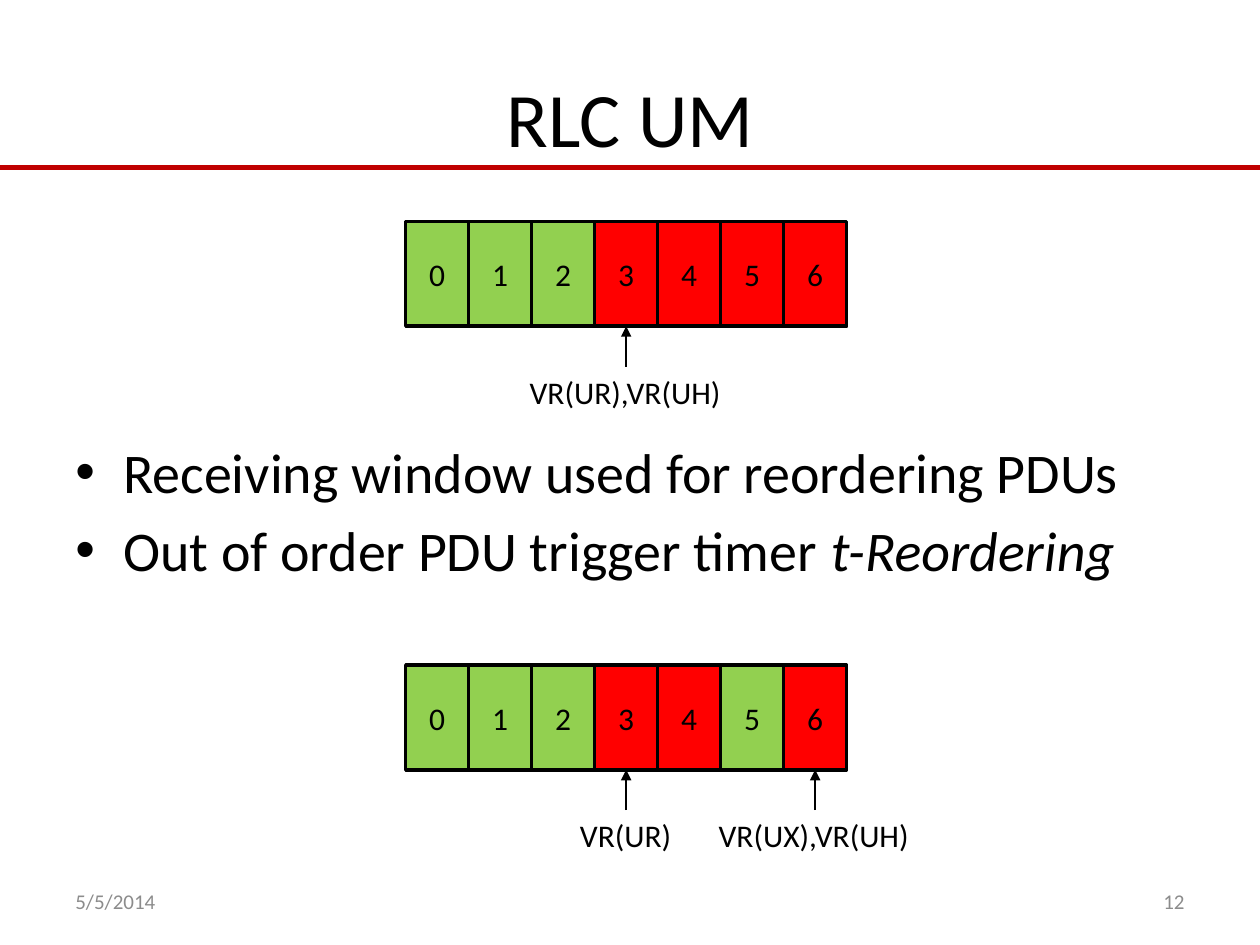
from lxml.etree import SubElement
from pptx import Presentation
from pptx.dml.color import RGBColor
from pptx.enum.shapes import MSO_CONNECTOR, MSO_SHAPE
from pptx.enum.text import MSO_ANCHOR, PP_ALIGN
from pptx.oxml.ns import qn
from pptx.util import Inches, Pt

BLACK = RGBColor(0x00, 0x00, 0x00)
CRIMSON = RGBColor(0xC0, 0x00, 0x00)
GRAY = RGBColor(0x8C, 0x8C, 0x8C)
GREEN = RGBColor(0x92, 0xD0, 0x50)
RED = RGBColor(0xFF, 0x00, 0x00)
FONT = "Calibri"
CELL_COUNT = 7
CELL_WIDTH = 0.5
CELL_HEIGHT = 0.83
POINTER_LENGTH = 0.32
LABEL_HEIGHT = 0.4


def style_font(font, size, color=BLACK):
    """Apply the slide's typeface with a size and color."""
    font.name = FONT
    font.size = Pt(size)
    font.color.rgb = color


def add_text(slide, box, text, size, color=BLACK, align=PP_ALIGN.LEFT,
             anchor=MSO_ANCHOR.TOP, wrap=True):
    """Place one line of text in a box given in inches."""
    shape = slide.shapes.add_textbox(*map(Inches, box))
    frame = shape.text_frame
    frame.word_wrap = wrap
    frame.vertical_anchor = anchor
    frame.text = text
    paragraph = frame.paragraphs[0]
    paragraph.alignment = align
    style_font(paragraph.runs[0].font, size, color)


def add_line(slide, start, end, color, width):
    """Draw a straight connector without a shadow."""
    line = slide.shapes.add_connector(
        MSO_CONNECTOR.STRAIGHT, *map(Inches, (*start, *end)))
    line.line.color.rgb = color
    line.line.width = Pt(width)
    SubElement(line._element.spPr, qn("a:effectLst"))
    return line


def add_header(slide, left, top, width, height):
    """Place the title and the rule across the slide."""
    add_text(slide, (left + 0.5, top + 0.3, width - 1, 1.25), "RLC UM", 44,
             align=PP_ALIGN.CENTER, anchor=MSO_ANCHOR.MIDDLE)
    rule_top = top + height
    add_line(slide, (left, rule_top), (left + width, rule_top), CRIMSON, 3.25)


def add_bullets(slide, left, top, width, height, items):
    """Place bulleted items, each a list of text and italic pairs."""
    shape = slide.shapes.add_textbox(*map(Inches, (left, top, width, height)))
    frame = shape.text_frame
    frame.word_wrap = True
    for index, item in enumerate(items):
        paragraph = frame.add_paragraph() if index else frame.paragraphs[0]
        properties = paragraph._p.get_or_add_pPr()
        properties.set("marL", str(Inches(0.38)))
        properties.set("indent", str(-Inches(0.38)))
        SubElement(properties, qn("a:buFont"), typeface="Arial")
        SubElement(properties, qn("a:buChar"), char="•")
        if index:
            paragraph.space_before = Pt(6.4)
        for text, italic in item:
            run = paragraph.add_run()
            run.text = text
            style_font(run.font, 32)
            run.font.italic = italic


def add_cell(slide, left, top, text, color):
    """Draw one numbered cell of a receiving window."""
    cell = slide.shapes.add_shape(
        MSO_SHAPE.RECTANGLE,
        *map(Inches, (left, top, CELL_WIDTH, CELL_HEIGHT)))
    cell.shadow.inherit = False
    cell.fill.solid()
    cell.fill.fore_color.rgb = color
    cell.line.color.rgb = BLACK
    cell.line.width = Pt(2)
    frame = cell.text_frame
    frame.text = text
    frame.vertical_anchor = MSO_ANCHOR.MIDDLE
    paragraph = frame.paragraphs[0]
    paragraph.alignment = PP_ALIGN.CENTER
    style_font(paragraph.runs[0].font, 18)
    return cell


def add_window(slide, left, top, received, pointers):
    """Draw a receiving window with state variables pointing at its cells."""
    cells = [
        add_cell(slide, left + index * CELL_WIDTH, top, str(index),
                 GREEN if index in received else RED)
        for index in range(CELL_COUNT)
    ]
    cell_bottom = top + CELL_HEIGHT
    label_top = cell_bottom + POINTER_LENGTH
    for index, label, label_width in pointers:
        center = left + (index + 0.5) * CELL_WIDTH
        add_text(slide, (center - label_width / 2, label_top, label_width,
                         LABEL_HEIGHT), label, 18, wrap=False)
        arrow = add_line(slide, (center, label_top), (center, cell_bottom),
                         BLACK, 1.5)
        arrow.end_connect(cells[index], 2)
        SubElement(arrow.line._get_or_add_ln(), qn("a:tailEnd"),
                   type="triangle")


def add_footer(slide, left, top, width, height):
    """Place the date at the left and the slide number at the right."""
    part_width = 2.33
    add_text(slide, (left, top, part_width, height), "5/5/2014", 12, GRAY,
             anchor=MSO_ANCHOR.MIDDLE)
    add_text(slide, (left + width - part_width, top, part_width, height),
             "12", 12, GRAY, PP_ALIGN.RIGHT, MSO_ANCHOR.MIDDLE)


def main():
    """Build and save the slide."""
    presentation = Presentation()
    presentation.slide_width = Inches(10)
    presentation.slide_height = Inches(7.5)
    slide = presentation.slides.add_slide(presentation.slide_layouts[6])
    add_header(slide, 0, 0, 10, 1.33)
    add_bullets(slide, 0.5, 3.42, 9, 1.58, [
        [("Receiving window used for reordering PDUs", False)],
        [("Out of order PDU trigger timer ", False), ("t-Reordering", True)],
    ])
    add_footer(slide, 0.5, 6.95, 9, 0.4)
    add_window(slide, 3.22, 1.76, {0, 1, 2}, [(3, "VR(UR),VR(UH)", 1.73)])
    add_window(slide, 3.22, 5.28, {0, 1, 2, 5},
               [(3, "VR(UR)", 0.93), (6, "VR(UX),VR(UH)", 1.73)])
    presentation.save("out.pptx")


if __name__ == "__main__":
    main()
